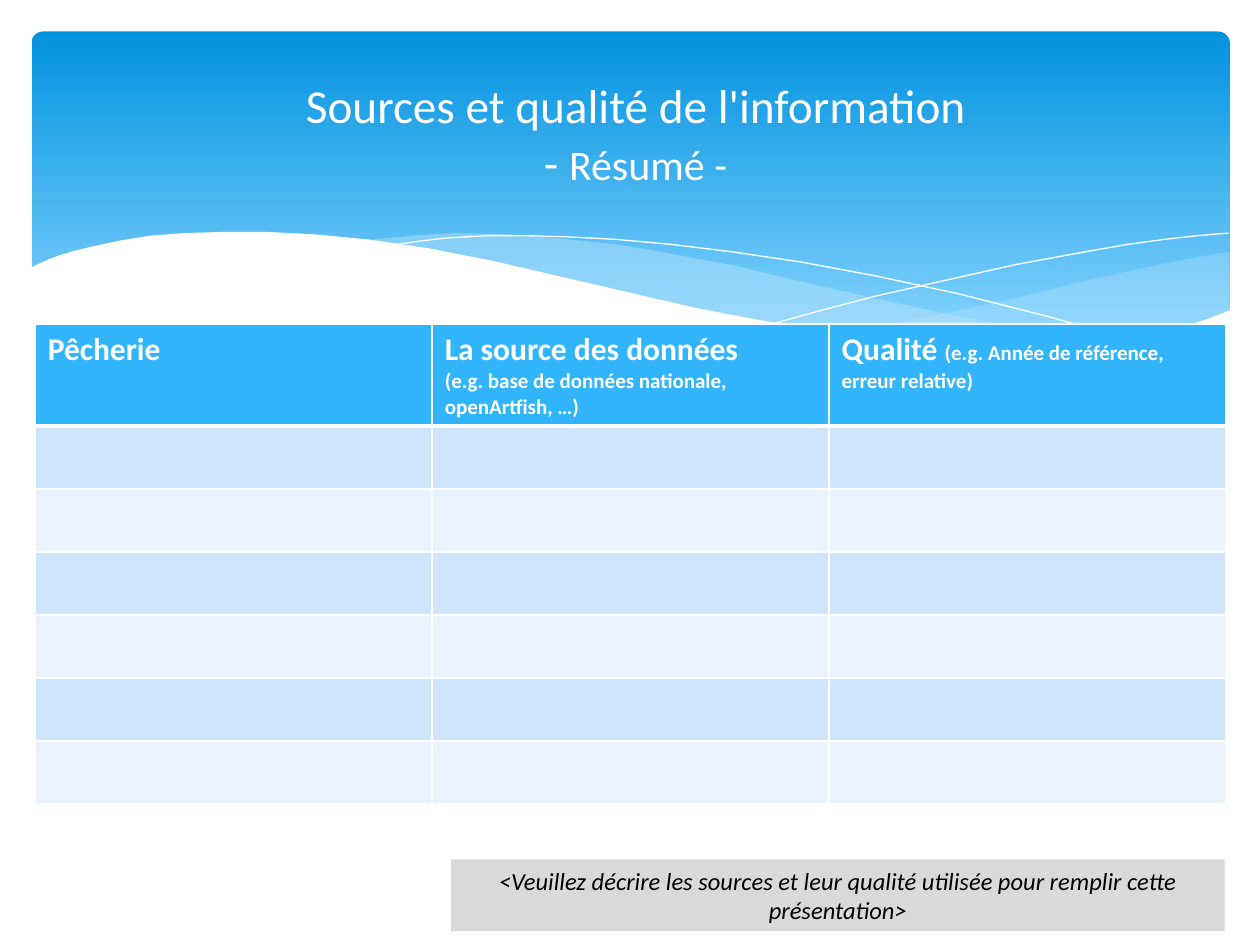
from lxml import etree
from pptx import Presentation
from pptx.dml.color import RGBColor
from pptx.enum import shapes, text
from pptx.oxml import ns
from pptx.util import Inches, Pt

FONT = "Calibri"
WHITE = "FFFFFF"
HEADER_FILL = "31B6FD"
BAND_FILLS = ["CEE5FE", "E8F3FF"]

RIGHT_WAVE = [
    (9.76, 2), (9.62, 2.02), (9.35, 2.07), (9.06, 2.13), (8.61, 2.23),
    (8.05, 2.37), (7.53, 2.48), (7.06, 2.57), (6.61, 2.65), (6.91, 2.69),
    (7.19, 2.72), (7.45, 2.75), (7.69, 2.77), (8.03, 2.78), (8.35, 2.77),
    (8.63, 2.75), (8.89, 2.72), (9.13, 2.67), (9.35, 2.62), (9.63, 2.52),
    (9.76, 2.47),
]
MIDDLE_WAVE = [
    (8.93, 2.73), (8.66, 2.69), (8.07, 2.6), (7.41, 2.47), (6.68, 2.31),
    (6.29, 2.22), (5.84, 2.11), (5.41, 2.03), (5.14, 1.98), (4.89, 1.94),
    (4.42, 1.89), (3.99, 1.86), (3.61, 1.85), (3.28, 1.87), (2.86, 1.91),
    (3.23, 1.96), (3.62, 2.03), (4.04, 2.11), (4.49, 2.22), (4.91, 2.32),
    (5.3, 2.4), (5.84, 2.52), (6.34, 2.61), (6.8, 2.68), (7.22, 2.74),
    (7.61, 2.77), (7.96, 2.78), (8.38, 2.78), (8.67, 2.76),
]
FALLING_LINE = [
    (3.09, 1.95), (3.28, 1.92), (3.53, 1.89), (3.87, 1.87), (4.16, 1.87),
    (4.5, 1.88), (4.89, 1.9), (5.33, 1.94), (5.82, 2), (6.36, 2.08),
    (6.95, 2.19), (7.6, 2.33), (8.31, 2.51), (9.07, 2.72),
]
RISING_LINE = [
    (6.13, 2.57), (6.53, 2.46), (6.95, 2.35), (7.48, 2.23), (8.06, 2.1),
    (8.66, 1.99), (8.95, 1.94), (9.24, 1.9), (9.51, 1.87), (9.75, 1.85),
]
FRONT_WAVE = [
    (9.77, 2.46), (9.59, 2.53), (9.4, 2.59), (9.2, 2.65), (8.99, 2.69),
    (8.75, 2.73), (8.5, 2.75), (8.23, 2.77), (7.93, 2.76), (7.61, 2.75),
    (7.26, 2.72), (6.88, 2.68), (6.48, 2.62), (6.03, 2.54), (5.55, 2.45),
    (5.03, 2.33), (4.47, 2.2), (3.91, 2.07), (3.4, 1.97), (2.92, 1.9),
    (2.5, 1.86), (2.11, 1.84), (1.77, 1.84), (1.46, 1.85), (1.19, 1.87),
    (0.95, 1.91), (0.76, 1.95), (0.59, 1.99), (0.46, 2.03), (0.36, 2.07),
    (0.23, 2.13), (0.23, 3.29), (9.77, 3.29),
]


def color(value):
    return RGBColor.from_string(value)


def format_font(font, values):
    for name, value in {"name": FONT, **values}.items():
        if name == "color":
            font.color.rgb = color(value)
        else:
            setattr(font, name, value)


def add_run(paragraph, content, **values):
    run = paragraph.add_run()
    run.text = content
    format_font(run.font, values)


def add_curve(slide, points, closed):
    corners = [(Inches(x), Inches(y)) for x, y in points]
    builder = slide.shapes.build_freeform(*corners[0])
    builder.add_line_segments(corners[1:], close=closed)
    shape = builder.convert_to_shape()
    shape.shadow.inherit = False
    return shape


def add_wave(slide, points, fill, opacity=100):
    shape = add_curve(slide, points, True)
    shape.fill.solid()
    shape.fill.fore_color.rgb = color(fill)
    shape.line.fill.background()
    if opacity < 100:
        fill_color = shape._element.spPr.find(".//" + ns.qn("a:srgbClr"))
        etree.SubElement(fill_color, ns.qn("a:alpha"), val=str(opacity * 1000))


def add_hairline(slide, points):
    shape = add_curve(slide, points, False)
    shape.fill.background()
    shape.line.color.rgb = color(WHITE)
    shape.line.width = Pt(0)


def add_banner(slide):
    banner = slide.shapes.add_shape(
        shapes.MSO_SHAPE.ROUNDED_RECTANGLE,
        Inches(0.25), Inches(0.25), Inches(9.51), Inches(2.7))
    banner.adjustments[0] = 0.034
    banner.shadow.inherit = False
    banner.line.fill.background()
    banner.fill.gradient()
    banner.fill.gradient_angle = 270
    stops = [(0, "0293E0"), (0.9, "83D3FE")]
    for stop, (position, value) in zip(banner.fill.gradient_stops, stops):
        stop.position = position
        stop.color.rgb = color(value)


def place_title(slide):
    title = slide.shapes.title
    slide.shapes._spTree.append(title._element)  # in front of the banner
    title.left, title.top = Inches(0.28), Inches(0.37)
    title.width, title.height = Inches(9.53), Inches(1.37)
    title.text_frame.vertical_anchor = text.MSO_ANCHOR.MIDDLE
    paragraph = title.text_frame.paragraphs[0]
    paragraph.alignment = text.PP_ALIGN.CENTER
    add_run(paragraph, "Sources et qualité de l'information", size=Pt(27), color=WHITE)
    paragraph.add_line_break()
    add_run(paragraph, "- ", size=Pt(27), color=WHITE)
    add_run(paragraph, "Résumé -", size=Pt(24), color=WHITE)


def add_note(slide, content):
    note = slide.shapes.add_shape(
        shapes.MSO_SHAPE.RECTANGLE,
        Inches(3.58), Inches(6.82), Inches(6.14), Inches(0.57))
    note.shadow.inherit = False
    note.fill.solid()
    note.fill.fore_color.rgb = color("D9D9D9")
    note.line.fill.background()
    note.text_frame.word_wrap = True
    paragraph = note.text_frame.paragraphs[0]
    paragraph.alignment = text.PP_ALIGN.CENTER
    add_run(paragraph, content, size=Pt(14), italic=True, color="000000")


def format_cell(cell, fill, top, bottom):
    """Set white borders (top and bottom widths in points) and the fill."""
    properties = cell._tc.get_or_add_tcPr()
    for side, width in {"L": 1, "R": 1, "T": top, "B": bottom}.items():
        line = etree.SubElement(properties, ns.qn("a:ln" + side), w=str(Pt(width)))
        solid = etree.SubElement(line, ns.qn("a:solidFill"))
        etree.SubElement(solid, ns.qn("a:srgbClr"), val=WHITE)
    cell.fill.solid()
    cell.fill.fore_color.rgb = color(fill)


def add_source_table(slide, headers, body_rows):
    """Each header is a list of paragraphs, each a list of (text, points)."""
    frame = slide.shapes.add_table(
        body_rows + 1, len(headers),
        Inches(0.28), Inches(2.57), Inches(9.45), Inches(3.73))
    table = frame.table
    table.horz_banding = False
    for index, row in enumerate(table.rows):
        row.height = Inches(0.5 if index else 0.73)
        fill = BAND_FILLS[(index - 1) % 2] if index else HEADER_FILL
        for cell in row.cells:
            format_cell(cell, fill, 3 if index == 1 else 1, 1 if index else 3)
    for column, paragraphs in enumerate(headers):
        frame = table.cell(0, column).text_frame
        for index, runs in enumerate(paragraphs):
            paragraph = frame.add_paragraph() if index else frame.paragraphs[0]
            for content, size in runs:
                add_run(paragraph, content, size=Pt(size), bold=True, color=WHITE)


def main():
    presentation = Presentation()
    presentation.slide_width, presentation.slide_height = Inches(10), Inches(7.5)
    slide = presentation.slides.add_slide(presentation.slide_layouts[5])
    add_banner(slide)
    add_wave(slide, RIGHT_WAVE, "C6E7FC", 29)
    add_wave(slide, MIDDLE_WAVE, "C6E7FC", 40)
    add_hairline(slide, FALLING_LINE)
    add_hairline(slide, RISING_LINE)
    add_wave(slide, FRONT_WAVE, WHITE)
    place_title(slide)
    add_note(slide, "<Veuillez décrire les sources et leur qualité utilisée "
                    "pour remplir cette présentation>")
    add_source_table(slide, [
        [[("Pêcherie", 18)]],
        [[("La source des données", 18)],
         [("(e.g. base de données nationale, openArtfish, …)", 12)]],
        [[("Qualité ", 18), ("(e.g. Année de référence, erreur relative)", 12)]],
    ], body_rows=6)
    presentation.save("out.pptx")


if __name__ == "__main__":
    main()
